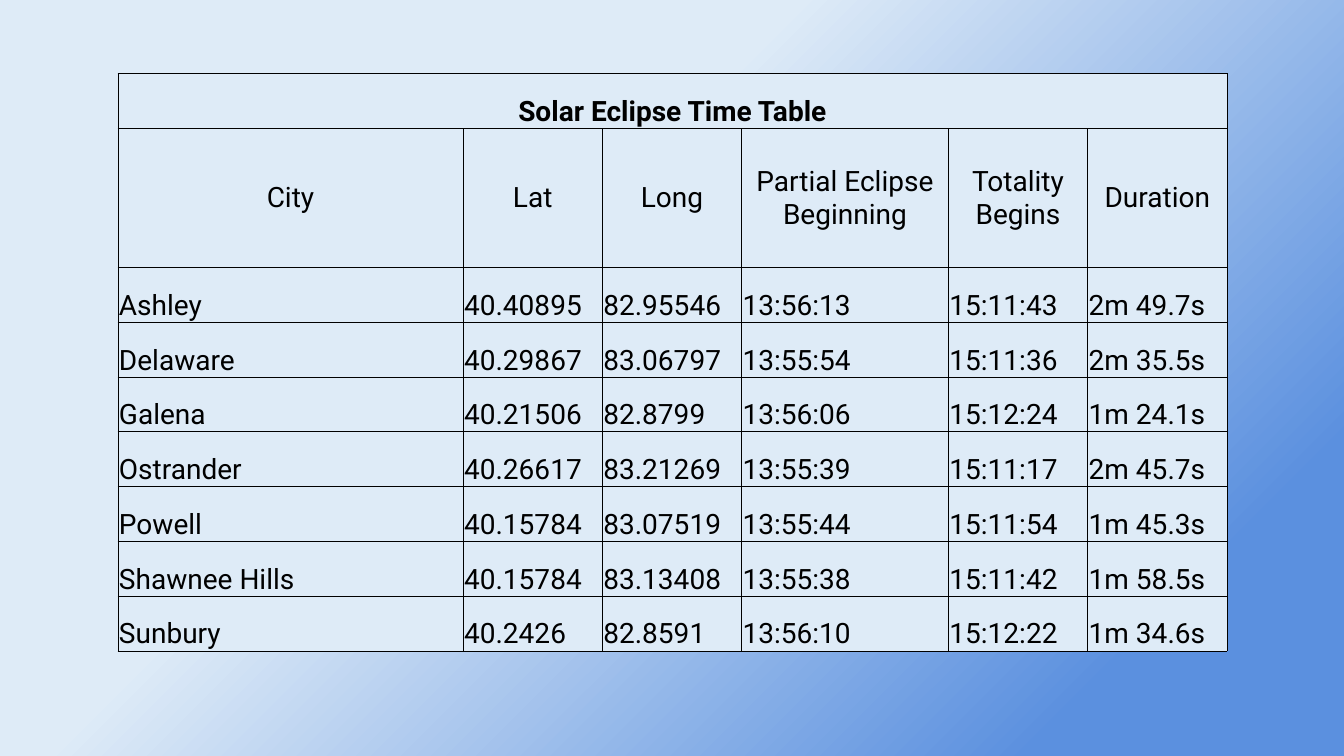
from dataclasses import dataclass

from lxml.etree import SubElement
from pptx import Presentation
from pptx.dml.color import RGBColor
from pptx.enum.text import MSO_ANCHOR, PP_ALIGN
from pptx.oxml.ns import qn
from pptx.slide import Slide
from pptx.table import Table, _Cell
from pptx.util import Inches, Pt

WIDTH, HEIGHT = Inches(13.33), Inches(7.5)
BLUE = RGBColor(0x5B, 0x90, 0xDF)
PALE = RGBColor(0xDE, 0xEB, 0xF7)
BLACK = RGBColor(0, 0, 0)
STOPS = ((0, BLUE), (15, BLUE), (62, PALE), (100, PALE))

LEFT, TOP = Inches(1.17), Inches(0.73)
SPAN, DEPTH = Inches(11), Inches(5.73)
COLS = (3.42, 1.38, 1.38, 2.05, 1.38, 1.38)
TALL = 2.54  # heading row height, in ordinary rows

INSETS = {
    "margin_left": Inches(0.01),
    "margin_right": Inches(0.01),
    "margin_top": Inches(0.01),
    "margin_bottom": 0,
}
FONT = {"name": "Roboto", "size": Pt(20)}
PLAIN = {"first_row": False, "horz_banding": False}


@dataclass(frozen=True)
class Look:
    anchor: MSO_ANCHOR
    align: PP_ALIGN
    bold: bool = False


@dataclass(frozen=True)
class Row:
    texts: tuple[str, ...]
    look: Look
    size: float = 1


TITLE = Look(MSO_ANCHOR.BOTTOM, PP_ALIGN.CENTER, True)
HEAD = Look(MSO_ANCHOR.MIDDLE, PP_ALIGN.CENTER)
BODY = Look(MSO_ANCHOR.BOTTOM, PP_ALIGN.LEFT)

CITIES = (
    ("Ashley", "40.40895", "82.95546", "13:56:13", "15:11:43", "2m 49.7s"),
    ("Delaware", "40.29867", "83.06797", "13:55:54", "15:11:36", "2m 35.5s"),
    ("Galena", "40.21506", "82.8799", "13:56:06", "15:12:24", "1m 24.1s"),
    ("Ostrander", "40.26617", "83.21269", "13:55:39", "15:11:17", "2m 45.7s"),
    ("Powell", "40.15784", "83.07519", "13:55:44", "15:11:54", "1m 45.3s"),
    ("Shawnee Hills", "40.15784", "83.13408", "13:55:38", "15:11:42", "1m 58.5s"),
    ("Sunbury", "40.2426", "82.8591", "13:56:10", "15:12:22", "1m 34.6s"),
)
ROWS = (
    Row(("Solar Eclipse Time Table",) + ("",) * (len(COLS) - 1), TITLE),
    Row(("City", "Lat", "Long", "Partial Eclipse Beginning",
         "Totality Begins", "Duration"), HEAD, TALL),
    *(Row(city, BODY) for city in CITIES),
)


def apply(target: object, values: dict) -> None:
    for name, value in values.items():
        setattr(target, name, value)


def paint_back(slide: Slide) -> None:
    fill = slide.background.fill
    fill.gradient()
    fill.gradient_angle = 135
    stops = slide.element.find(f".//{qn('a:gsLst')}")
    for stop in list(stops):
        stops.remove(stop)
    for share, color in STOPS:
        stop = SubElement(stops, qn("a:gs"), pos=str(share * 1000))
        SubElement(stop, qn("a:srgbClr"), val=str(color))


def add_edges(cell: _Cell) -> None:
    """Rule all four sides; must run before the cell is filled."""
    props = cell._tc.get_or_add_tcPr()
    for side in ("lnL", "lnR", "lnT", "lnB"):
        line = SubElement(props, qn(f"a:{side}"), w=str(Pt(0.5)))
        fill = SubElement(line, qn("a:solidFill"))
        SubElement(fill, qn("a:srgbClr"), val=str(BLACK))


def fill_cell(cell: _Cell, text: str, look: Look) -> None:
    add_edges(cell)
    cell.fill.solid()
    cell.fill.fore_color.rgb = PALE
    apply(cell, INSETS | {"vertical_anchor": look.anchor})
    cell.text = text
    para = cell.text_frame.paragraphs[0]
    para.alignment = look.align
    for run in para.runs:
        apply(run.font, FONT | {"bold": look.bold})
        run.font.color.rgb = BLACK


def size_grid(table: Table) -> None:
    """Share the table's width and depth out by column and row weight."""
    for col, share in zip(table.columns, COLS):
        col.width = round(SPAN * share / sum(COLS))
    total = sum(row.size for row in ROWS)
    for line, row in zip(table.rows, ROWS):
        line.height = round(DEPTH * row.size / total)


def add_times(slide: Slide) -> None:
    frame = slide.shapes.add_table(len(ROWS), len(COLS), LEFT, TOP, SPAN, DEPTH)
    table = frame.table
    apply(table, PLAIN)
    size_grid(table)
    for line, row in zip(table.rows, ROWS):
        for cell, text in zip(line.cells, row.texts):
            fill_cell(cell, text, row.look)
    table.cell(0, 0).merge(table.cell(0, len(COLS) - 1))


def main() -> None:
    deck = Presentation()
    apply(deck, {"slide_width": WIDTH, "slide_height": HEIGHT})
    slide = deck.slides.add_slide(deck.slide_layouts[6])
    paint_back(slide)
    add_times(slide)
    deck.save("out.pptx")


if __name__ == "__main__":
    main()
